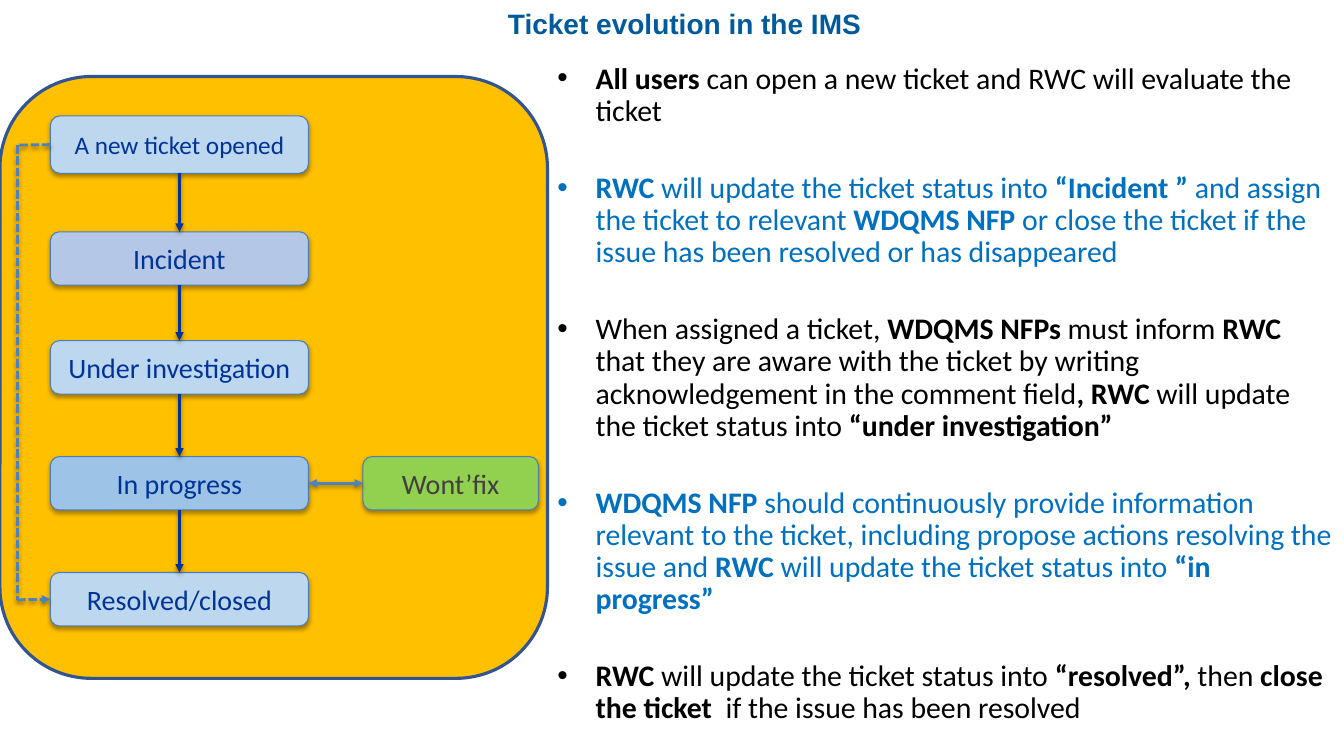
from dataclasses import dataclass
from itertools import pairwise

from lxml.etree import SubElement
from pptx import Presentation
from pptx.dml.color import RGBColor
from pptx.enum.dml import MSO_LINE
from pptx.enum.shapes import MSO_CONNECTOR as Connector, MSO_SHAPE as Shape
from pptx.enum.text import MSO_ANCHOR as Anchor, PP_ALIGN as Align
from pptx.oxml.ns import qn
from pptx.util import Inches, Pt

TOP, LEFT, BOTTOM, RIGHT = range(4)


@dataclass(frozen=True)
class Theme:
    title_font: str = "Arial"
    body_font: str = "Calibri"
    title_size: float = 20
    box_size: float = 20
    small_box_size: float = 18
    body_size: float = 21.3
    title: str = "005A9C"
    panel: str = "FFC000"
    panel_line: str = "325491"
    box_line: str = "4B7EBC"
    box_text: str = "003399"
    light: str = "BDD7EE"
    lavender: str = "B4C7E7"
    medium: str = "9DC3E6"
    green: str = "92D050"
    gray: str = "404040"
    arrow: str = "003399"
    side_arrow: str = "4F81BD"
    black: str = "000000"
    blue: str = "0070C0"


class SlideBuilder:
    def __init__(self, slide, theme):
        self.slide = slide
        self.theme = theme

    def format_run(self, run, font, size, color, bold=False):
        run.font.name = font
        run.font.size = Pt(size)
        run.font.bold = bold
        run.font.color.rgb = RGBColor.from_string(color)

    def add_shadow(self, effects, alpha, distance):
        shadow = SubElement(
            effects, qn("a:outerShdw"), blurRad=str(Pt(3.1)),
            dist=str(Pt(distance)), dir="5400000", rotWithShape="0")
        color = SubElement(shadow, qn("a:srgbClr"), val=self.theme.black)
        SubElement(color, qn("a:alpha"), val=str(alpha * 1000))

    def add_title(self, text, left, top, width, height):
        shape = self.slide.shapes.add_textbox(
            Inches(left), Inches(top), Inches(width), Inches(height))
        frame = shape.text_frame
        frame.word_wrap = True
        frame.margin_left = frame.margin_right = 0
        frame.margin_top = frame.margin_bottom = 0
        frame.text = text
        paragraph = frame.paragraphs[0]
        paragraph.alignment = Align.CENTER
        paragraph.line_spacing = 1.05
        self.format_run(paragraph.runs[0], self.theme.title_font,
                        self.theme.title_size, self.theme.title, True)

    def add_rounded(self, left, top, width, height, fill, line, line_width):
        shape = self.slide.shapes.add_shape(
            Shape.ROUNDED_RECTANGLE,
            Inches(left), Inches(top), Inches(width), Inches(height))
        shape.shadow.inherit = False
        shape.fill.solid()
        shape.fill.fore_color.rgb = RGBColor.from_string(fill)
        shape.line.color.rgb = RGBColor.from_string(line)
        shape.line.width = Pt(line_width)
        return shape

    def add_box(self, text, left, top, width, height, fill, color, size):
        shape = self.add_rounded(left, top, width, height, fill,
                                 self.theme.box_line, 0.75)
        self.add_shadow(shape._element.spPr.find(qn("a:effectLst")), 35, 1.8)
        frame = shape.text_frame
        frame.word_wrap = True
        frame.vertical_anchor = Anchor.MIDDLE
        frame.text = text
        paragraph = frame.paragraphs[0]
        paragraph.alignment = Align.CENTER
        self.format_run(paragraph.runs[0], self.theme.body_font, size, color)
        return shape

    def add_line(self, start, end, color, dashed=False, heads=()):
        points = [Inches(value) for value in (*start, *end)]
        connector = self.slide.shapes.add_connector(Connector.STRAIGHT, *points)
        connector.line.color.rgb = RGBColor.from_string(color)
        connector.line.width = Pt(2)
        if dashed:
            connector.line.dash_style = MSO_LINE.SQUARE_DOT
        properties = connector._element.spPr
        for head in heads:
            SubElement(properties.find(qn("a:ln")), qn(f"a:{head}"),
                       type="triangle")
        self.add_shadow(SubElement(properties, qn("a:effectLst")), 38, 1.6)
        return connector

    def join_boxes(self, first, first_side, second, second_side, color, heads):
        connector = self.add_line((0, 0), (0, 0), color, heads=heads)
        connector.begin_connect(first, first_side)
        connector.end_connect(second, second_side)

    def add_bullets(self, items, left, top, width, height):
        shape = self.slide.shapes.add_textbox(
            Inches(left), Inches(top), Inches(width), Inches(height))
        frame = shape.text_frame
        frame.word_wrap = True
        for index, text in enumerate(items):
            paragraph = frame.paragraphs[0] if index == 0 else frame.add_paragraph()
            paragraph.line_spacing = 0.9
            if index < len(items) - 1:
                paragraph.space_after = Pt(32)
            properties = paragraph._p.get_or_add_pPr()
            properties.set("marL", str(Inches(0.38)))
            properties.set("indent", str(-Inches(0.38)))
            SubElement(properties, qn("a:buFont"), typeface=self.theme.title_font)
            SubElement(properties, qn("a:buChar"), char="•")
            color = self.theme.blue if index % 2 else self.theme.black
            for position, part in enumerate(text.split("**")):
                if part:
                    run = paragraph.add_run()
                    run.text = part
                    self.format_run(run, self.theme.body_font,
                                    self.theme.body_size, color, position % 2 == 1)


def main():
    presentation = Presentation()
    presentation.slide_width = Inches(13.33)
    presentation.slide_height = Inches(7.5)
    theme = Theme()
    builder = SlideBuilder(
        presentation.slides.add_slide(presentation.slide_layouts[6]), theme)

    builder.add_title("Ticket evolution in the IMS", 0.5, 0.05, 12.58, 0.33)
    builder.add_rounded(0, 0.76, 5.43, 5.97, theme.panel, theme.panel_line, 2.25)

    stages = [
        ("A new ticket opened", 1.15, 0.57, theme.light, theme.small_box_size),
        ("Incident", 2.3, 0.53, theme.lavender, theme.box_size),
        ("Under investigation", 3.38, 0.53, theme.light, theme.box_size),
        ("In progress", 4.53, 0.53, theme.medium, theme.box_size),
        ("Resolved/closed", 5.68, 0.53, theme.light, theme.box_size),
    ]
    boxes = [
        builder.add_box(text, 0.5, top, 2.56, height, fill, theme.box_text, size)
        for text, top, height, fill, size in stages
    ]
    wont_fix = builder.add_box("Wont’fix", 3.6, 4.53, 1.74, 0.53,
                               theme.green, theme.gray, theme.box_size)

    for upper, lower in pairwise(boxes):
        builder.join_boxes(upper, BOTTOM, lower, TOP, theme.arrow, ["tailEnd"])
    builder.join_boxes(boxes[3], RIGHT, wont_fix, LEFT, theme.side_arrow,
                       ["headEnd", "tailEnd"])

    bypass_x, opened_y, closed_y = 0.17, 1.44, 5.95
    leaving = builder.add_line((0.5, opened_y), (bypass_x, opened_y),
                               theme.side_arrow, dashed=True)
    leaving.begin_connect(boxes[0], LEFT)
    builder.add_line((bypass_x, opened_y), (bypass_x, closed_y),
                     theme.side_arrow, dashed=True)
    arriving = builder.add_line((bypass_x, closed_y), (0.5, closed_y),
                                theme.side_arrow, dashed=True, heads=["tailEnd"])
    arriving.end_connect(boxes[-1], LEFT)

    builder.add_bullets([
        "**All users **can open a new ticket and RWC will evaluate the ticket",
        "**RWC **will update the ticket status into **“Incident ” **and assign "
        "the ticket to relevant **WDQMS NFP **or close the ticket if the issue "
        "has been resolved or has disappeared",
        "When assigned a ticket, **WDQMS NFPs **must inform **RWC** that they "
        "are aware with the ticket by writing acknowledgement in the comment "
        "field**, RWC **will update the ticket status into "
        "**“under investigation”**",
        "**WDQMS NFP **should continuously provide information relevant to the "
        "ticket, including propose actions resolving the issue and **RWC **will "
        "update the ticket status into **“in progress”**",
        "**RWC **will update the ticket status into **“resolved”, **then "
        "**close the ticket  **if the issue has been resolved",
    ], 5.43, 0.58, 7.9, 6.77)

    presentation.save("out.pptx")


if __name__ == "__main__":
    main()
